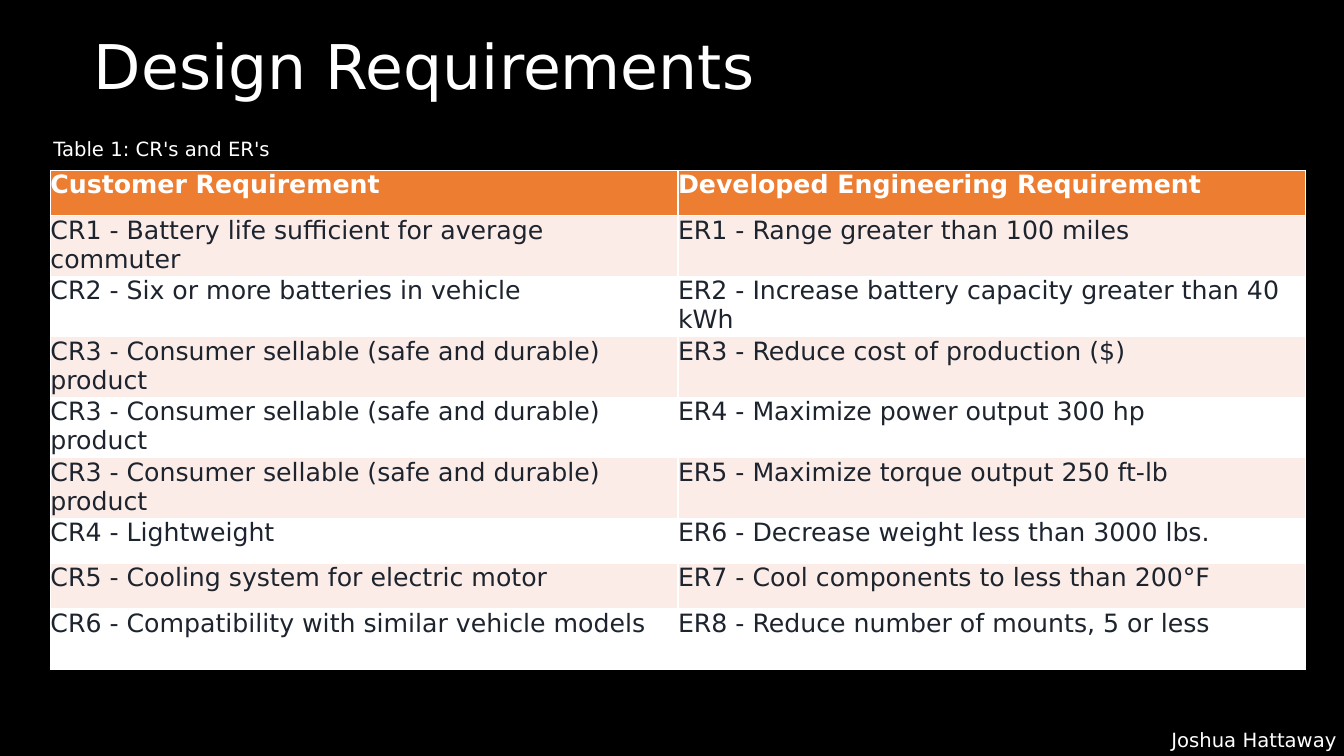
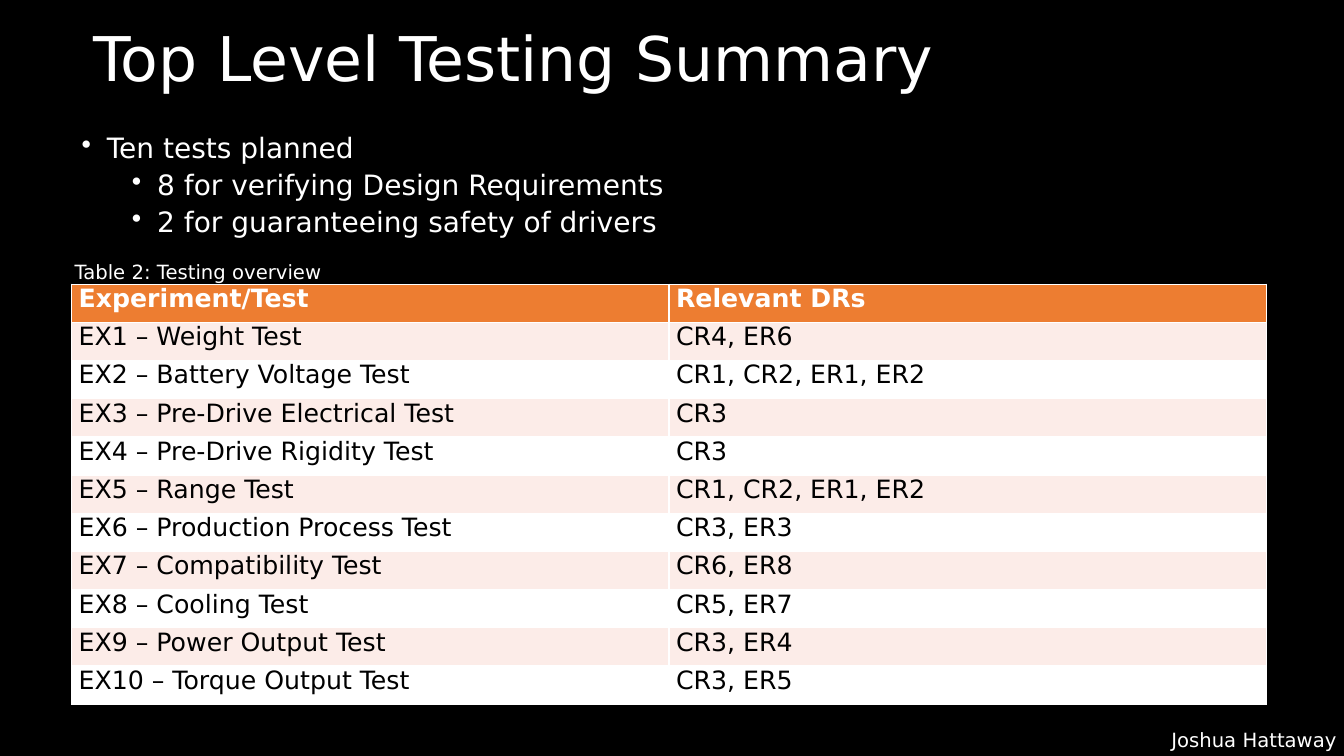
import lxml.etree
import pptx
import pptx.dml.color
import pptx.enum.text
import pptx.oxml.ns
import pptx.util

FONT = "DejaVu Sans"
COLORS = {
    "background": "000000",
    "light": "FFFFFF",
    "header": "ED7D31",
    "band": "FCECE8",
    "slate": "1D242E",
    "ink": "000000",
}
SLIDE_WIDTH = pptx.util.Inches(13.33)
SLIDE_HEIGHT = pptx.util.Inches(7.5)
FOOTER_BOX = (86.42, 95.6, 13.58, 4.53)
FOOTER = "Joshua Hattaway"

REQUIREMENTS = [
    ("Customer Requirement", "Developed Engineering Requirement"),
    ("CR1 - Battery life sufficient for average commuter", "ER1 - Range greater than 100 miles"),
    ("CR2 - Six or more batteries in vehicle", "ER2 - Increase battery capacity greater than 40 kWh"),
    ("CR3 - Consumer sellable (safe and durable) product", "ER3 - Reduce cost of production ($)"),
    ("CR3 - Consumer sellable (safe and durable) product", "ER4 - Maximize power output 300 hp"),
    ("CR3 - Consumer sellable (safe and durable) product", "ER5 - Maximize torque output 250 ft-lb"),
    ("CR4 - Lightweight", "ER6 - Decrease weight less than 3000 lbs."),
    ("CR5 - Cooling system for electric motor", "ER7 - Cool components to less than 200°F"),
    ("CR6 - Compatibility with similar vehicle models", "ER8 - Reduce number of mounts, 5 or less"),
]
TESTS = [
    ("Experiment/Test", "Relevant DRs"),
    ("EX1 – Weight Test", "CR4, ER6"),
    ("EX2 – Battery Voltage Test", "CR1, CR2, ER1, ER2"),
    ("EX3 – Pre-Drive Electrical Test", "CR3"),
    ("EX4 – Pre-Drive Rigidity Test", "CR3"),
    ("EX5 – Range Test", "CR1, CR2, ER1, ER2"),
    ("EX6 – Production Process Test", "CR3, ER3"),
    ("EX7 – Compatibility Test", "CR6, ER8"),
    ("EX8 – Cooling Test", "CR5, ER7"),
    ("EX9 – Power Output Test", "CR3, ER4"),
    ("EX10 – Torque Output Test", "CR3, ER5"),
]
TEST_PLAN = [
    (0, "Ten tests planned"),
    (1, "8 for verifying Design Requirements"),
    (1, "2 for guaranteeing safety of drivers"),
]


def color(name):
    """Return a named colour."""
    return pptx.dml.color.RGBColor.from_string(COLORS[name])


def lengths(box):
    """Turn a box in percent of the slide into lengths."""
    sides = (SLIDE_WIDTH, SLIDE_HEIGHT) * 2
    return [round(side * share / 100) for side, share in zip(sides, box)]


def format_runs(paragraph, size, color_name, bold=False):
    """Give every run of a paragraph its font."""
    for run in paragraph.runs:
        run.font.name = FONT
        run.font.size = pptx.util.Pt(size)
        run.font.bold = bold
        run.font.color.rgb = color(color_name)


def add_text(slide, box, text, size=14):
    """Add a wrapped light text box and return its frame."""
    frame = slide.shapes.add_textbox(*lengths(box)).text_frame
    frame.word_wrap = True
    frame.text = text
    for paragraph in frame.paragraphs:
        format_runs(paragraph, size, "light")
    return frame


def add_titled_slide(presentation, title, top):
    """Add a slide with its title and footer."""
    slide = presentation.slides.add_slide(presentation.slide_layouts[5])
    shape = slide.shapes.title
    shape.left, shape.top, shape.width, shape.height = lengths((6.23, top, 75, 18.4))
    frame = shape.text_frame
    frame.text = title
    frame.vertical_anchor = pptx.enum.text.MSO_ANCHOR.TOP
    paragraph = frame.paragraphs[0]
    paragraph.alignment = pptx.enum.text.PP_ALIGN.LEFT
    paragraph.line_spacing = 0.9
    format_runs(paragraph, 44, "light")
    add_text(slide, FOOTER_BOX, FOOTER).margin_right = 0
    return slide


def add_borders(cell):
    """Draw thin light borders around a cell."""
    properties = cell._tc.get_or_add_tcPr()
    qualified = pptx.oxml.ns.qn
    for index, side in enumerate(("a:lnL", "a:lnR", "a:lnT", "a:lnB")):
        line = lxml.etree.Element(qualified(side), w=str(pptx.util.Pt(1)))
        fill = lxml.etree.SubElement(line, qualified("a:solidFill"))
        lxml.etree.SubElement(fill, qualified("a:srgbClr"), val=COLORS["light"])
        properties.insert(index, line)


def fill_cell(cell, text, row_index, text_color, inset):
    """Write and format one cell according to its row."""
    header = row_index == 0
    fill_name = "header" if header else ("light", "band")[row_index % 2]
    cell.text = text
    cell.margin_top = cell.margin_bottom = 0
    cell.margin_left = cell.margin_right = pptx.util.Inches(inset)
    cell.fill.solid()
    cell.fill.fore_color.rgb = color(fill_name)
    add_borders(cell)
    format_runs(cell.text_frame.paragraphs[0], 18, "light" if header else text_color, header)


def add_captioned_table(slide, box, caption, caption_rise, rows, weights, text_color, inset):
    """Add a banded table with a caption above it."""
    left, top, width, height = lengths(box)
    table = slide.shapes.add_table(len(rows), len(rows[0]), left, top, width, height).table
    for column in table.columns:
        column.width = width // len(rows[0])
    for row_index, (texts, weight) in enumerate(zip(rows, weights)):
        table.rows[row_index].height = round(height * weight / sum(weights))
        for column_index, text in enumerate(texts):
            fill_cell(table.cell(row_index, column_index), text, row_index, text_color, inset)
    add_text(slide, (box[0] - 0.52, box[1] - caption_rise, 39.3, 4.53), caption)


def add_bullets(slide, box, items):
    """Add a bulleted list of two levels."""
    frame = add_text(slide, box, "\n".join(text for level, text in items), 20)
    for paragraph, (level, text) in zip(frame.paragraphs, items):
        paragraph.level = level
        paragraph.line_spacing = 0.9
        paragraph.space_before = pptx.util.Pt(5 if level else 10)
        properties = paragraph._p.get_or_add_pPr()
        properties.set("marL", str(pptx.util.Inches(0.25 + 0.5 * level)))
        properties.set("indent", str(pptx.util.Inches(-0.25)))
        lxml.etree.SubElement(properties, pptx.oxml.ns.qn("a:buChar"), char="•")


def build_requirements(presentation):
    """Build the design requirements slide."""
    slide = add_titled_slide(presentation, "Design Requirements", 4.13)
    add_captioned_table(
        slide, (3.75, 22.53, 93.4, 66), "Table 1: CR's and ER's", 5.07,
        REQUIREMENTS, [3, 4, 4, 4, 4, 4, 3, 3, 4], "slate", 0)


def build_testing(presentation):
    """Build the testing summary slide."""
    slide = add_titled_slide(presentation, "Top Level Testing Summary", 3.07)
    add_captioned_table(
        slide, (5.33, 37.6, 88.9, 55.6), "Table 2: Testing overview", 3.87,
        TESTS, [1] * len(TESTS), "ink", 0.07)
    add_bullets(slide, (5.33, 17.07, 87.55, 16.27), TEST_PLAN)


def main():
    """Build and save the presentation."""
    presentation = pptx.Presentation()
    presentation.slide_width = SLIDE_WIDTH
    presentation.slide_height = SLIDE_HEIGHT
    background = presentation.slide_master.background.fill
    background.solid()
    background.fore_color.rgb = color("background")
    build_requirements(presentation)
    build_testing(presentation)
    presentation.save("out.pptx")


if __name__ == "__main__":
    main()
